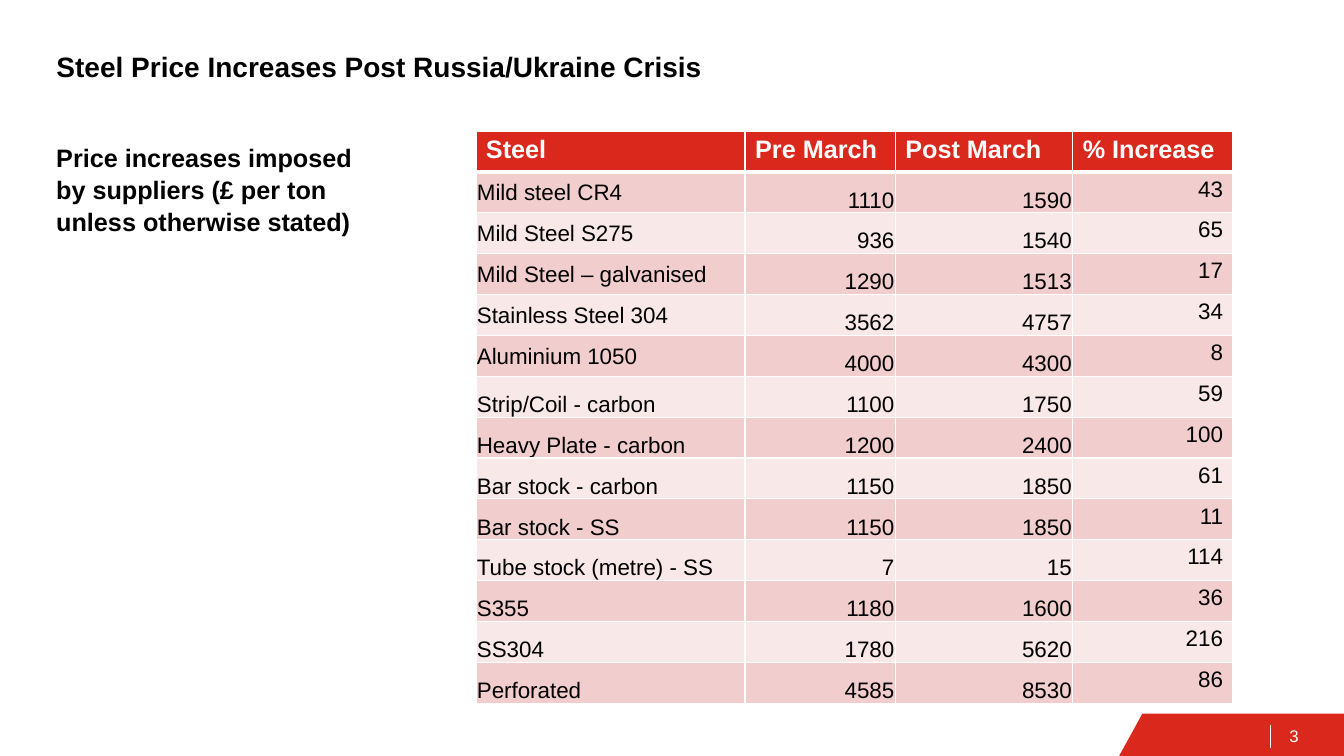
from lxml.etree import SubElement
from pptx import Presentation
from pptx.dml.color import RGBColor
from pptx.enum.shapes import MSO_CONNECTOR
from pptx.enum.text import MSO_ANCHOR, PP_ALIGN
from pptx.oxml.ns import qn
from pptx.util import Inches, Pt

RED = RGBColor(0xDA, 0x28, 0x1C)
DARK_BAND = RGBColor(0xF1, 0xCD, 0xCD)
LIGHT_BAND = RGBColor(0xF8, 0xE8, 0xE8)
WHITE = RGBColor(0xFF, 0xFF, 0xFF)
BLACK = RGBColor(0x00, 0x00, 0x00)

SLIDE_WIDTH, SLIDE_HEIGHT = Inches(13.33), Inches(7.5)
LEFT_MARGIN = 3.45
COLUMN_SHARES = [20.03, 11.18, 13.2, 11.93]
ROW_SHARE = 5.41
BANNER_TOP = 94.4
TEXT_INSETS = (0.1, 0.05, 0.1, 0.05)
TIGHT_INSETS = (0.01, 0.01, 0.01, 0)

HEADINGS = ("Steel", "Pre March", "Post March", "% Increase")
PRICES = [
    ("Mild steel CR4", 1110, 1590, 43),
    ("Mild Steel S275", 936, 1540, 65),
    ("Mild Steel – galvanised", 1290, 1513, 17),
    ("Stainless Steel 304", 3562, 4757, 34),
    ("Aluminium 1050", 4000, 4300, 8),
    ("Strip/Coil - carbon", 1100, 1750, 59),
    ("Heavy Plate - carbon", 1200, 2400, 100),
    ("Bar stock - carbon", 1150, 1850, 61),
    ("Bar stock - SS", 1150, 1850, 11),
    ("Tube stock (metre) - SS", 7, 15, 114),
    ("S355", 1180, 1600, 36),
    ("SS304", 1780, 5620, 216),
    ("Perforated", 4585, 8530, 86),
]
MIDDLE_NAMED_ROWS = 5


def across(share):
    """Turn a percentage of the slide width into a length."""
    return round(SLIDE_WIDTH * share / 100)


def down(share):
    """Turn a percentage of the slide height into a length."""
    return round(SLIDE_HEIGHT * share / 100)


def place(left, top, width, height):
    """Turn four percentages into a left, top, width and height."""
    return across(left), down(top), across(width), down(height)


def write_text(frame, text, *, size, color=BLACK, bold=False,
               align=PP_ALIGN.LEFT, spacing=1.0):
    """Write one formatted paragraph into a text frame."""
    frame.word_wrap = True
    paragraph = frame.paragraphs[0]
    paragraph.alignment = align
    paragraph.line_spacing = spacing
    paragraph.space_before = Pt(0)
    run = paragraph.add_run()
    run.text = text
    run.font.name = "Arial"
    run.font.size = Pt(size)
    run.font.bold = bold
    run.font.color.rgb = color


def set_insets(holder, insets, anchor):
    """Set the margins and vertical anchor of a text frame or cell."""
    left, top, right, bottom = map(Inches, insets)
    holder.margin_left, holder.margin_top = left, top
    holder.margin_right, holder.margin_bottom = right, bottom
    holder.vertical_anchor = anchor


def add_title(slide, text):
    """Move and fill the title placeholder."""
    title = slide.shapes.title
    title.left, title.top, title.width, title.height = place(
        LEFT_MARGIN, 5.6, 63.77, 5.87)
    set_insets(title.text_frame, TEXT_INSETS, MSO_ANCHOR.TOP)
    write_text(title.text_frame, text, size=20, bold=True, spacing=1.05)


def add_label(slide, text, box, insets=TEXT_INSETS, anchor=MSO_ANCHOR.TOP,
              **text_format):
    """Add a text box at a position given in percentages."""
    frame = slide.shapes.add_textbox(*place(*box)).text_frame
    set_insets(frame, insets, anchor)
    write_text(frame, text, **text_format)


def add_banner(slide):
    """Add the slanted red corner with its divider and page number."""
    corners = [(83.27, 100), (85, BANNER_TOP), (100, BANNER_TOP), (100, 100)]
    points = [(across(x), down(y)) for x, y in corners]
    builder = slide.shapes.build_freeform(*points[0])
    builder.add_line_segments(points[1:], close=True)
    banner = builder.convert_to_shape()
    banner.shadow.inherit = False
    banner.fill.solid()
    banner.fill.fore_color.rgb = RED
    banner.line.fill.background()

    divider = slide.shapes.add_connector(
        MSO_CONNECTOR.STRAIGHT, across(94.52), down(95.87),
        across(94.52), down(98.93))
    divider.line.color.rgb = WHITE
    divider.line.width = Pt(0.75)
    SubElement(divider._element.spPr, qn("a:effectLst"))

    add_label(slide, "3", (94.97, 94.67, 5.03, 5.33),
              insets=(0.13, 0.07, 0.13, 0.07), anchor=MSO_ANCHOR.MIDDLE,
              size=12, color=WHITE)


def style_cell(cell, fill, top_width, bottom_width):
    """Give a cell white borders and a solid fill."""
    properties = cell._tc.get_or_add_tcPr()
    widths = {"lnL": 1, "lnR": 1, "lnT": top_width, "lnB": bottom_width}
    for side, width in widths.items():
        border = SubElement(properties, qn(f"a:{side}"), w=str(Pt(width)))
        solid = SubElement(border, qn("a:solidFill"))
        SubElement(solid, qn("a:srgbClr"), val=str(WHITE))
    cell.fill.solid()
    cell.fill.fore_color.rgb = fill


def fill_header(table):
    """Write the red heading row."""
    for cell, heading in zip(table.rows[0].cells, HEADINGS):
        style_cell(cell, RED, 1, 3)
        write_text(cell.text_frame, heading, size=18, color=WHITE, bold=True)


def fill_price_row(table, number, values):
    """Write one banded row of steel prices."""
    band = DARK_BAND if number % 2 else LIGHT_BAND
    for column, value in enumerate(values):
        cell = table.cell(number, column)
        style_cell(cell, band, 3 if number == 1 else 1, 1)
        if column < len(values) - 1:
            middle = column == 0 and number <= MIDDLE_NAMED_ROWS
            anchor = MSO_ANCHOR.MIDDLE if middle else MSO_ANCHOR.BOTTOM
            set_insets(cell, TIGHT_INSETS, anchor)
        align = PP_ALIGN.RIGHT if column else PP_ALIGN.LEFT
        write_text(cell.text_frame, str(value), size=16, align=align)


def add_price_table(slide):
    """Add the table of prices before and after March."""
    row_count = len(PRICES) + 1
    box = place(35.41, 17.33, sum(COLUMN_SHARES), ROW_SHARE * row_count)
    table = slide.shapes.add_table(row_count, len(HEADINGS), *box).table
    for column, share in zip(table.columns, COLUMN_SHARES):
        column.width = across(share)
    for row in table.rows:
        row.height = down(ROW_SHARE)
    fill_header(table)
    for number, values in enumerate(PRICES, start=1):
        fill_price_row(table, number, values)


def main():
    """Build and save the steel price slide."""
    presentation = Presentation()
    presentation.slide_width = SLIDE_WIDTH
    presentation.slide_height = SLIDE_HEIGHT
    slide = presentation.slides.add_slide(presentation.slide_layouts[5])
    add_banner(slide)
    add_title(slide, "Steel Price Increases Post Russia/Ukraine Crisis")
    add_label(slide, "Price increases imposed by suppliers "
              "(£ per ton unless otherwise stated)",
              (LEFT_MARGIN, 18, 25.21, 13.47), size=18, bold=True, spacing=1.05)
    add_price_table(slide)
    presentation.save("out.pptx")


if __name__ == "__main__":
    main()
